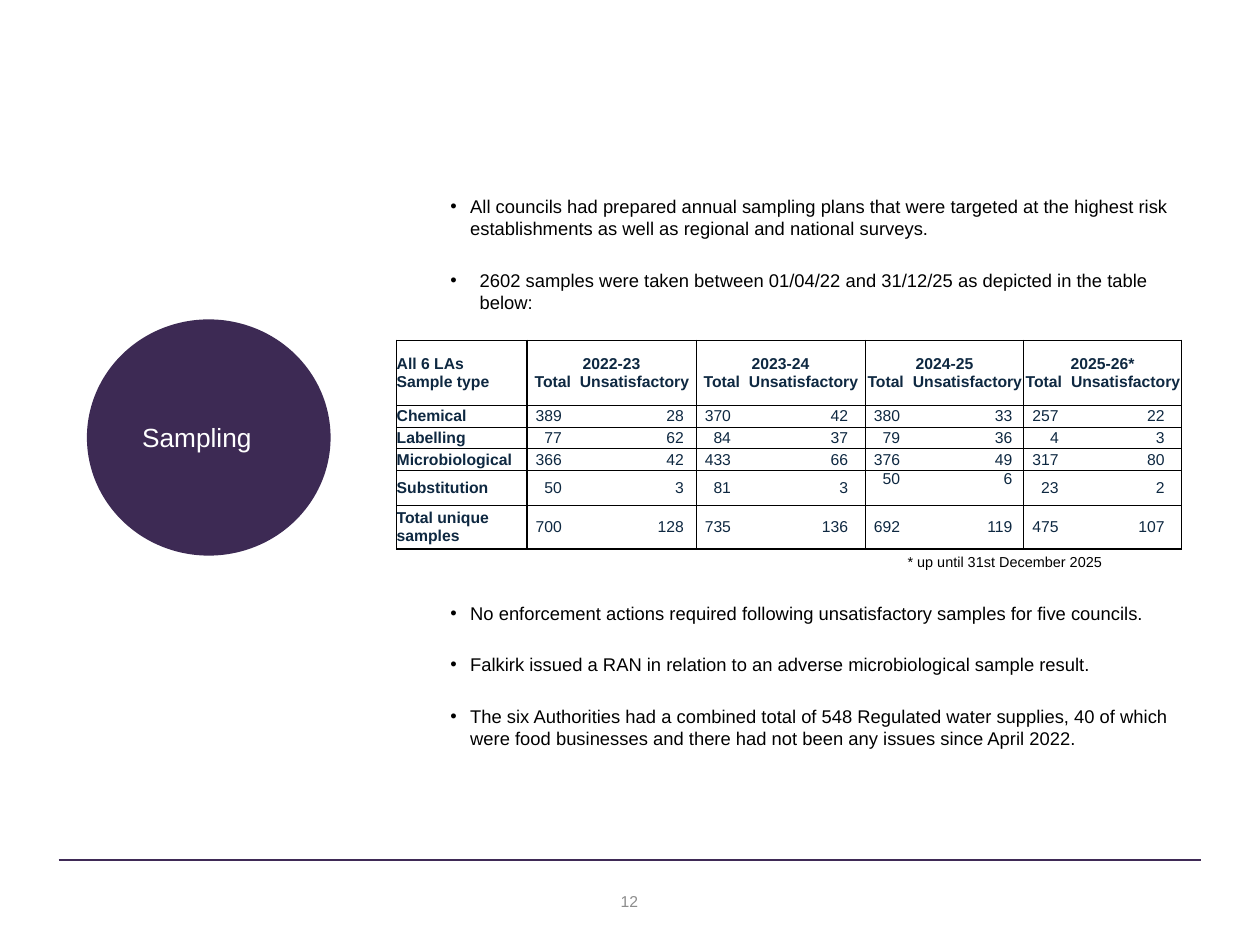
from lxml import etree
from pptx import Presentation
from pptx.dml.color import RGBColor
from pptx.enum.shapes import MSO_CONNECTOR as Connector, MSO_SHAPE as Shape
from pptx.enum.text import MSO_ANCHOR as Anchor, PP_ALIGN as Align
from pptx.oxml.ns import qn
from pptx.util import Inches, Pt

COLORS = {"purple": "3D2A54", "rule": "3F2A56", "navy": "0E2841",
          "black": "000000", "white": "FFFFFF", "gray": "8C8C8C"}


def color(name):
    return RGBColor.from_string(COLORS[name])


class SlideBuilder:
    font_name = "Arial"

    def __init__(self, slide):
        self.slide = slide

    def style(self, para, size, ink, bold=False):
        font = para.font
        font.name, font.size, font.bold = self.font_name, Pt(size), bold
        font.color.rgb = color(ink)

    def frame(self, shape, anchor, insets=(0.1, 0.05, 0.1, 0.05)):
        frame = shape.text_frame
        frame.word_wrap = True
        frame.vertical_anchor = anchor
        (frame.margin_left, frame.margin_top,
         frame.margin_right, frame.margin_bottom) = map(Inches, insets)
        return frame

    def indent(self, para, left, hanging=0, bullet=False):
        props = para._p.get_or_add_pPr()
        props.set("marL", str(Inches(left)))
        props.set("indent", str(-Inches(hanging)))
        if bullet:
            etree.SubElement(props, qn("a:buFont"), typeface=self.font_name)
            etree.SubElement(props, qn("a:buChar"), char="•")
        else:
            etree.SubElement(props, qn("a:buNone"))

    def tabs(self, para, stops, align):
        tab_list = etree.SubElement(para._p.get_or_add_pPr(), qn("a:tabLst"))
        for stop in stops:
            etree.SubElement(tab_list, qn("a:tab"), pos=str(Inches(stop)), algn=align)

    def rule(self, left, right, top):
        line = self.slide.shapes.add_connector(
            Connector.STRAIGHT, Inches(left), Inches(top), Inches(right), Inches(top))
        line.line.color.rgb = color("rule")
        line.line.width = Pt(1)
        etree.SubElement(line._element.spPr, qn("a:effectLst"))

    def label(self, area, text, size, ink):
        box = self.slide.shapes.add_textbox(*map(Inches, area))
        para = self.frame(box, Anchor.MIDDLE).paragraphs[0]
        para.text, para.alignment = text, Align.CENTER
        self.style(para, size, ink)

    def circle(self, area, text):
        shape = self.slide.shapes.add_shape(Shape.OVAL, *map(Inches, area))
        shape.shadow.inherit = False
        shape.fill.solid()
        shape.fill.fore_color.rgb = color("purple")
        shape.line.fill.background()
        para = self.frame(shape, Anchor.MIDDLE, (0.1, 0.05, 0.35, 0.05)).paragraphs[0]
        para.text, para.alignment = text, Align.CENTER
        self.style(para, 20, "white")

    def body(self, area, top_inset, items):
        box = self.slide.shapes.add_textbox(*map(Inches, area))
        frame = self.frame(box, Anchor.TOP, (0.1, top_inset, 0.1, 0.05))
        for index, (text, size, before, left, hanging) in enumerate(items):
            para = frame.add_paragraph() if index else frame.paragraphs[0]
            para.text = text
            para.space_before = Pt(before)
            self.indent(para, left, hanging, bullet=hanging > 0)
            self.style(para, size, "black")

    def cell(self, cell, lines, bold, anchor=Anchor.MIDDLE):
        cell.fill.background()
        cell.vertical_anchor = anchor
        cell.margin_left = cell.margin_right = cell.margin_top = cell.margin_bottom = 0
        props = cell._tc.get_or_add_tcPr()
        for index, side in enumerate(("lnL", "lnR", "lnT", "lnB")):
            border = etree.Element(qn(f"a:{side}"), w=str(Pt(1)))
            fill = etree.SubElement(border, qn("a:solidFill"))
            etree.SubElement(fill, qn("a:srgbClr"), val=COLORS["black"])
            props.insert(index, border)
        for index, (text, align, stops, tab_align) in enumerate(lines):
            frame = cell.text_frame
            para = frame.add_paragraph() if index else frame.paragraphs[0]
            para.text, para.alignment = text, align
            if stops:
                self.tabs(para, stops, tab_align)
            self.style(para, 12, "navy", bold)

    def table(self, left, top, widths, heights):
        table = self.slide.shapes.add_table(
            len(heights), len(widths), Inches(left), Inches(top),
            Inches(sum(widths)), Inches(sum(heights))).table
        table.first_row = table.horz_banding = False
        for column, width in zip(table.columns, widths):
            column.width = Inches(width)
        for row, height in zip(table.rows, heights):
            row.height = Inches(height)
        return table


deck = Presentation()
deck.slide_width, deck.slide_height = Inches(13.34), Inches(10)
page = SlideBuilder(deck.slides.add_slide(deck.slide_layouts[6]))

# Footer
page.rule(0.62, 12.72, 9.1)
page.label((5.11, 9.27, 3.11, 0.53), "12", 12, "gray")

# Findings: text, size, space before, left indent, hanging indent
page.body((4.67, 1.71, 7.84, 6.53), 0.36, [
    ("All councils had prepared annual sampling plans that were targeted at the highest "
     "risk establishments as well as regional and national surveys.", 14, 0, 0.21, 0.21),
    ("2602 samples were taken between 01/04/22 and 31/12/25 as depicted in the table "
     "below:", 14, 22.5, 0.31, 0.31),
    ("* up until 31st December 2025", 11, 183, 4.84, 0),
    ("No enforcement actions required following unsatisfactory samples for five councils.",
     14, 23.5, 0.21, 0.21),
    ("Falkirk issued a RAN in relation to an adverse microbiological sample result.",
     14, 22.5, 0.21, 0.21),
    ("The six Authorities had a combined total of 548 Regulated water supplies, 40 of which "
     "were food businesses and there had not been any issues since April 2022.",
     14, 22.5, 0.21, 0.21),
])

# Section title
page.circle((0.92, 3.38, 2.58, 2.5), "Sampling")

# Sampling results: (total, unsatisfactory) for each year
years = ["2022-23", "2023-24", "2024-25", "2025-26*"]
results = {
    "Chemical": [(389, 28), (370, 42), (380, 33), (257, 22)],
    "Labelling": [(77, 62), (84, 37), (79, 36), (4, 3)],
    "Microbiological": [(366, 42), (433, 66), (376, 49), (317, 80)],
    "Substitution": [(50, 3), (81, 3), (50, 6), (23, 2)],
    "Total unique samples": [(700, 128), (735, 136), (692, 119), (475, 107)],
}
widths = [1.38, 1.79, 1.79, 1.68, 1.67]
unsatisfactory_stops = [1.66, 1.61, 1.56, 1.49]
table = page.table(4.2, 3.6, widths, [0.69, 0.23, 0.23, 0.23, 0.37, 0.46])

page.cell(table.cell(0, 0), [("All 6 LAs", Align.LEFT, (), "l"),
                             ("Sample type", Align.LEFT, (), "l")], True)
for column, (year, width) in enumerate(zip(years, widths[1:]), 1):
    start = (width - 1.63) / 2
    page.cell(table.cell(0, column), [
        (year, Align.CENTER, (), "l"),
        ("\tTotal\tUnsatisfactory", Align.LEFT, (start, start + 0.48), "l")], True)

for row, (sample, counts) in enumerate(results.items(), 1):
    page.cell(table.cell(row, 0), [(sample, Align.LEFT, (), "l")], True)
    for column, ((total, failed), stop) in enumerate(zip(counts, unsatisfactory_stops), 1):
        raised = sample == "Substitution" and years[column - 1] == "2024-25"
        page.cell(table.cell(row, column),
                  [(f"\t{total}\t{failed}", Align.LEFT, (0.37, stop), "r")],
                  False, Anchor.TOP if raised else Anchor.MIDDLE)

deck.save("out.pptx")
